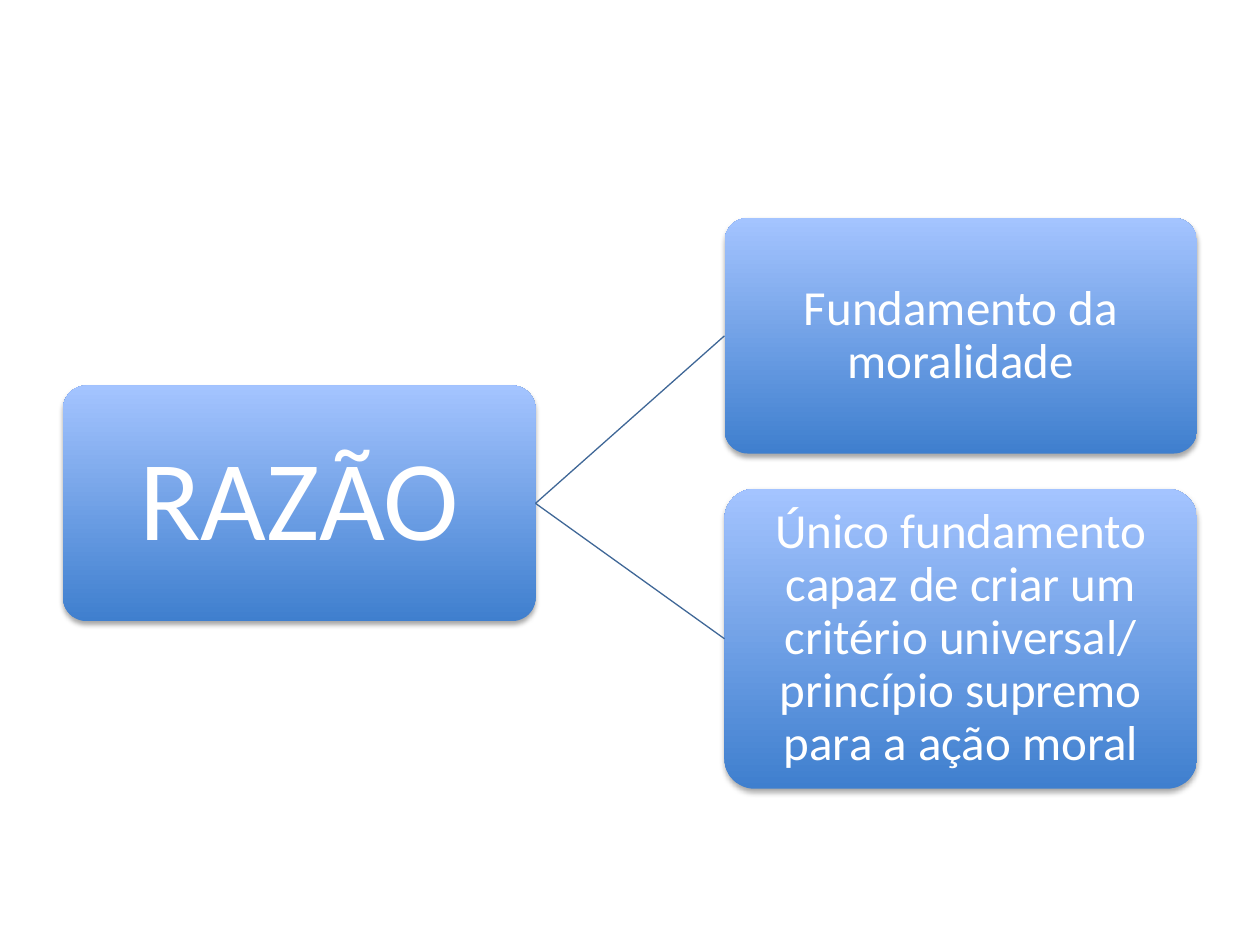
"""Build a slide linking reason to its two roles in morality."""
import lxml.etree
import pptx
import pptx.dml.color
import pptx.enum.shapes
import pptx.enum.text
import pptx.oxml
import pptx.oxml.ns
import pptx.util
from pptx.util import Inches

COLORS = {"bottom": "3F7FCE", "top": "A4C4FF", "line": "3F6797", "text": "FFFFFF", "shadow": "000000"}
SHADOW = (
    f'<a:outerShdw {pptx.oxml.ns.nsdecls("a")} blurRad="{pptx.util.Pt(3.1)}" dist="{pptx.util.Pt(1.8)}" '
    f'dir="5400000" rotWithShape="0"><a:srgbClr val="{COLORS["shadow"]}"><a:alpha val="35000"/>'
    '</a:srgbClr></a:outerShdw>'
)
BOX_WIDTH = 3.75
BOXES = [
    ("RAZÃO", 0.5, 3.06, 1.87, 65, 0.05),
    ("Fundamento da moralidade", 5.75, 1.73, 1.87, 28, 0.02),
    ("Único fundamento capaz de criar um critério universal/ princípio supremo para a ação moral",
     5.75, 3.88, 2.38, 28, 0.02),
]


def rgb(name):
    return pptx.dml.color.RGBColor.from_string(COLORS[name])


presentation = pptx.Presentation()
presentation.slide_width = Inches(10)
presentation.slide_height = Inches(7.5)
slide = presentation.slides.add_slide(presentation.slide_layouts[6])

shapes = []
for text, left, top, height, size, inset in BOXES:
    shape = slide.shapes.add_shape(
        pptx.enum.shapes.MSO_SHAPE.ROUNDED_RECTANGLE,
        Inches(left), Inches(top), Inches(BOX_WIDTH), Inches(height))
    shape.adjustments[0] = 0.1
    shape.fill.gradient()
    shape.fill.gradient_angle = 90
    for stop, name, position in zip(shape.fill.gradient_stops, ("bottom", "top"), (0, 1)):
        stop.color.rgb = rgb(name)
        stop.position = position
    shape.line.fill.background()
    shape.shadow.inherit = False
    effects = shape.element.spPr.find(pptx.oxml.ns.qn("a:effectLst"))
    effects.append(pptx.oxml.parse_xml(SHADOW))

    frame = shape.text_frame
    frame.text = text
    frame.word_wrap = True
    frame.vertical_anchor = pptx.enum.text.MSO_ANCHOR.MIDDLE
    frame.margin_left = frame.margin_right = Inches(inset)
    frame.margin_top = frame.margin_bottom = Inches(inset)
    paragraph = frame.paragraphs[0]
    paragraph.alignment = pptx.enum.text.PP_ALIGN.CENTER
    paragraph.line_spacing = 0.9
    font = paragraph.runs[0].font
    font.name = "Calibri"
    font.size = pptx.util.Pt(size)
    font.color.rgb = rgb("text")
    shapes.append(shape)

reason, *roles = shapes
for role in roles:
    connector = slide.shapes.add_connector(pptx.enum.shapes.MSO_CONNECTOR.STRAIGHT, 0, 0, 0, 0)
    connector.begin_connect(reason, 3)
    connector.end_connect(role, 1)
    connector.line.color.rgb = rgb("line")
    connector.line.width = pptx.util.Pt(0.75)
    lxml.etree.SubElement(connector.element.spPr, pptx.oxml.ns.qn("a:effectLst"))

presentation.save("out.pptx")
